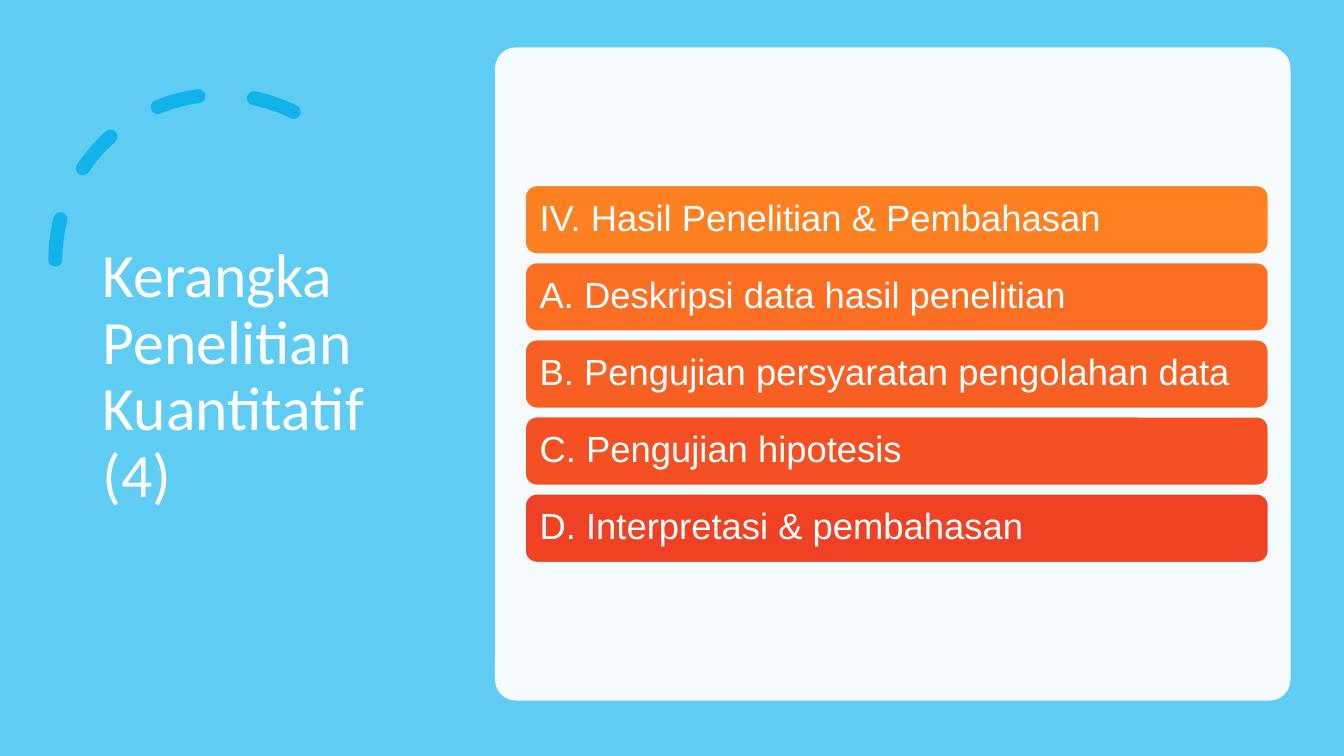
from lxml import etree
from pptx import Presentation
from pptx.dml.color import RGBColor
from pptx.enum.dml import MSO_LINE
from pptx.enum.shapes import MSO_SHAPE
from pptx.enum.text import MSO_ANCHOR, MSO_AUTO_SIZE, PP_ALIGN
from pptx.oxml.ns import qn
from pptx.util import Inches, Pt

ROUNDED, ARC = MSO_SHAPE.ROUNDED_RECTANGLE, MSO_SHAPE.ARC
MIDDLE, LEFT = MSO_ANCHOR.MIDDLE, PP_ALIGN.LEFT
NO_FIT, DASH = MSO_AUTO_SIZE.NONE, MSO_LINE.DASH

SKY = RGBColor(0x5E, 0xCC, 0xF3)
BLUE = RGBColor(0x12, 0xB2, 0xEB)
WHITE = RGBColor(0xFF, 0xFF, 0xFF)

CHAPTER_ROWS = [
    ("IV. Hasil Penelitian & Pembahasan", RGBColor(0xFF, 0x80, 0x21)),
    ("A. Deskripsi data hasil penelitian", RGBColor(0xFC, 0x6F, 0x22)),
    ("B. Pengujian persyaratan pengolahan data", RGBColor(0xF8, 0x5F, 0x22)),
    ("C. Pengujian hipotesis", RGBColor(0xF5, 0x50, 0x23)),
    ("D. Interpretasi & pembahasan", RGBColor(0xF1, 0x41, 0x24)),
]
ROW_LEFT, ROW_TOP, ROW_WIDTH, ROW_HEIGHT, ROW_GAP = 5.21, 1.84, 7.37, 0.68, 0.085


def add_shape(kind, left, top, width, height):
    shape = slide.shapes.add_shape(
        kind, Inches(left), Inches(top), Inches(width), Inches(height))
    shape.shadow.inherit = False
    return shape


def write_text(shape, text, font_name, size):
    frame = shape.text_frame
    frame.text = text
    frame_format = {"word_wrap": True, "auto_size": NO_FIT, "vertical_anchor": MIDDLE}
    for name, value in frame_format.items():
        setattr(frame, name, value)
    paragraph = frame.paragraphs[0]
    paragraph.alignment = LEFT
    paragraph.line_spacing = 0.9
    for name, value in {"name": font_name, "size": Pt(size)}.items():
        setattr(paragraph.font, name, value)
    paragraph.font.color.rgb = WHITE


presentation = Presentation()
presentation.slide_width = Inches(13.33)
presentation.slide_height = Inches(7.5)
slide = presentation.slides.add_slide(presentation.slide_layouts[5])

# Background
slide.background.fill.solid()
slide.background.fill.fore_color.rgb = SKY

# Title
title = slide.shapes.title
title_box = {"left": 0.92, "top": 0.7, "width": 3.23, "height": 6.09}
for name, value in title_box.items():
    setattr(title, name, Inches(value))
write_text(title, "Kerangka Penelitian Kuantitatif (4)", "Calibri", 44)

# Dashed arc, mirrored, with round line ends
arc = add_shape(ARC, 0.55, 0.94, 3.27, 3.27)
arc.adjustments[0] = 146.13
arc.adjustments[1] = 0
arc.fill.background()
arc.line.color.rgb = BLUE
arc.line.width = Pt(10)
arc.line.dash_style = DASH
arc_properties = arc.element.spPr
arc_properties.find(qn("a:xfrm")).set("flipH", "1")
arc_properties.find(qn("a:ln")).set("cap", "rnd")

# Translucent panel
panel = add_shape(ROUNDED, 4.91, 0.47, 7.89, 6.48)
panel.adjustments[0] = 0.032
panel.fill.solid()
panel.fill.fore_color.rgb = WHITE
panel.line.fill.background()
panel_color = panel.element.spPr.find(qn("a:solidFill"))[0]
etree.SubElement(panel_color, qn("a:alpha")).set("val", "95000")

# Chapter rows
for index, (text, color) in enumerate(CHAPTER_ROWS):
    top = ROW_TOP + index * (ROW_HEIGHT + ROW_GAP)
    row = add_shape(ROUNDED, ROW_LEFT, top, ROW_WIDTH, ROW_HEIGHT)
    row.fill.solid()
    row.fill.fore_color.rgb = color
    row.line.color.rgb = WHITE
    row.line.width = Pt(1)
    for side in ("left", "right", "top", "bottom"):
        setattr(row.text_frame, "margin_" + side, Inches(0.11))
    write_text(row, text, "Arial", 26)

presentation.save("out.pptx")
